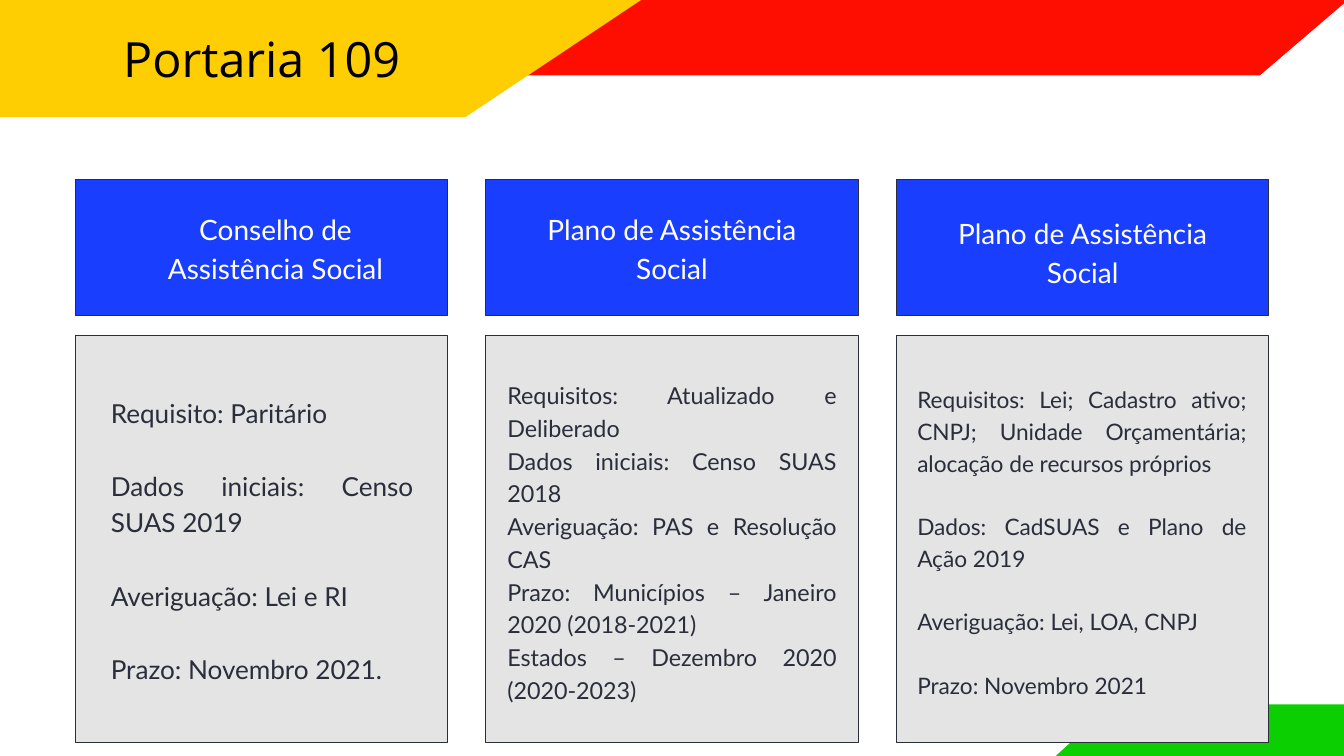
from pptx import Presentation
from pptx import util as u
from pptx.dml.color import RGBColor
from pptx.enum import shapes, text

RED = RGBColor(0xFE, 0x0E, 0x00)
YELLOW = RGBColor(0xFE, 0xCE, 0x02)
GREEN = RGBColor(0x0B, 0xCF, 0x00)
BLUE = RGBColor(0x19, 0x3E, 0xFE)
GREY = RGBColor(0xE4, 0xE4, 0xE4)
INK = RGBColor(0x2A, 0x2E, 0x3A)
WHITE = RGBColor(0xFF, 0xFF, 0xFF)
BLACK = RGBColor(0x00, 0x00, 0x00)

# Grid in inches: three equal columns between the margins, two rows
SLIDE_W, SLIDE_H = 20, 11.25
MARGIN, COL_W = 1.12, 5.54
PITCH = (SLIDE_W - 2 * MARGIN - COL_W) / 2
HEAD_TOP, HEAD_H = 2.67, 2.02
BODY_TOP, BODY_H = 4.99, 6.05

prs = Presentation()
prs.slide_width, prs.slide_height = u.Inches(SLIDE_W), u.Inches(SLIDE_H)
s = prs.slides.add_slide(prs.slide_layouts[6])


def add_text(paragraphs, box, *, size, leading, color, font="Lato",
             align=text.PP_ALIGN.CENTER, after=0):
    """Add a text box without insets; leading and after are in points."""
    tf = s.shapes.add_textbox(*map(u.Inches, box)).text_frame
    tf.word_wrap = True
    tf.margin_left = tf.margin_right = tf.margin_top = tf.margin_bottom = 0
    for i, line in enumerate(paragraphs):
        p = tf.add_paragraph() if i else tf.paragraphs[0]
        p.alignment = align
        p.line_spacing = u.Pt(leading)
        p.space_after = u.Pt(after)
        r = p.add_run()
        r.text = line
        r.font.size = u.Pt(size)
        r.font.name = font
        r.font.color.rgb = color


# Slanted bands, running past the slide's edges
bands = [
    (RED, [(18.75, 1.12), (4.44, 1.12), (-0.35, -2.98), (23.54, -2.98)]),
    (YELLOW, [(6.93, 1.74), (-4.08, 1.74), (-6.84, -0.1), (9.69, -0.1)]),
    (GREEN, [(16.55, 10.48), (20.41, 10.48), (21.63, 11.6), (15.33, 11.6)]),
]
for color, corners in bands:
    start, *rest = [(u.Inches(x), u.Inches(y)) for x, y in corners]
    builder = s.shapes.build_freeform(*start)
    builder.add_line_segments(rest, close=True)
    sp = builder.convert_to_shape()
    sp.shadow.inherit = False
    sp.fill.solid()
    sp.fill.fore_color.rgb = color
    sp.line.fill.background()

add_text(["Portaria 109"], (1.7, 0.28, 4.39, 0.97), size=52, leading=72.8,
         color=BLACK, font="Open Sans")

# Heading, its box, body lines, their box, body size, leading, space after
cards = [
    ("Conselho de Assistência Social", (2.11, 3.08, 3.98, 1.14),
     ["Requisito: Paritário",
      "Dados iniciais: Censo SUAS 2019",
      "Averiguação: Lei e RI",
      "Prazo: Novembro 2021."],
     (1.65, 5.83, 4.5, 4.31), 28, 39.2, 39.2),
    ("Plano de Assistência Social", (7.72, 3.08, 4.56, 1.14),
     ["Requisitos: Atualizado e Deliberado",
      "Dados iniciais: Censo SUAS 2018",
      "Averiguação: PAS e Resolução CAS",
      "Prazo: Municípios – Janeiro 2020 (2018-2021)",
      "Estados – Dezembro 2020 (2020-2023)"],
     (7.55, 5.61, 4.9, 4.76), 25, 35, 0),
    ("Plano de Assistência Social", (14.25, 3.14, 3.72, 1.14),
     ["Requisitos: Lei; Cadastro ativo; CNPJ; Unidade Orçamentária; "
      "alocação de recursos próprios",
      "Dados: CadSUAS e Plano de Ação 2019",
      "Averiguação: Lei, LOA, CNPJ",
      "Prazo: Novembro 2021"],
     (13.65, 5.68, 4.9, 4.63), 24.3, 34, 34),
]
for col, (heading, head_box, lines, body_box, size, leading, after) in enumerate(cards):
    left = MARGIN + col * PITCH
    for top, height, color in [(HEAD_TOP, HEAD_H, BLUE), (BODY_TOP, BODY_H, GREY)]:
        sp = s.shapes.add_shape(shapes.MSO_SHAPE.RECTANGLE,
                                *map(u.Inches, (left, top, COL_W, height)))
        sp.shadow.inherit = False
        sp.fill.solid()
        sp.fill.fore_color.rgb = color
        sp.line.color.rgb = INK
        sp.line.width = u.Pt(0.75)
    add_text([heading], head_box, size=30, leading=42, color=WHITE)
    add_text(lines, body_box, size=size, leading=leading, color=INK,
             align=text.PP_ALIGN.JUSTIFY, after=after)

prs.save("out.pptx")
